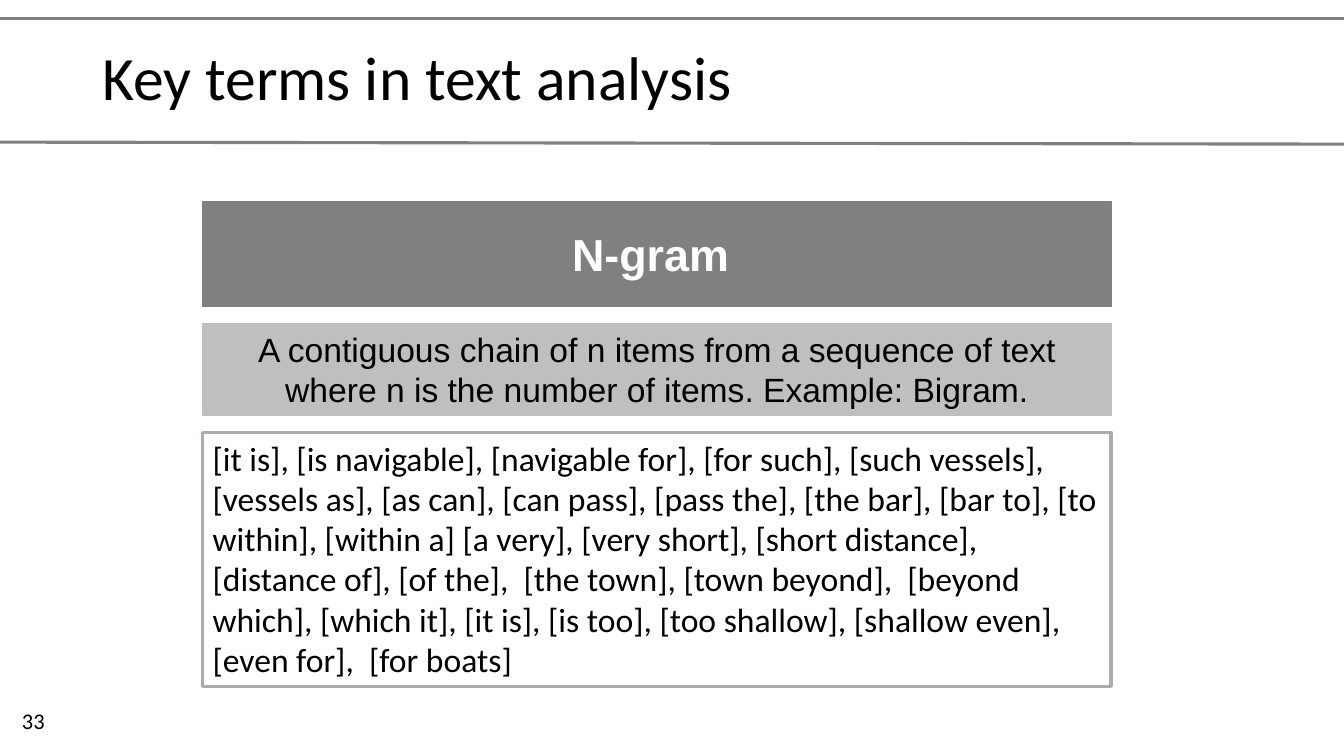
from lxml import etree
from pptx import Presentation
from pptx.dml.color import RGBColor
from pptx.enum import shapes, text
from pptx.oxml.ns import qn
from pptx.util import Inches, Pt


def color(hex_string):
    return RGBColor.from_string(hex_string)


def write(box, words, size, font="Calibri", ink="000000", bold=False,
          align=text.PP_ALIGN.LEFT, anchor=text.MSO_ANCHOR.MIDDLE, spacing=1.0):
    frame = box.text_frame
    frame.word_wrap = True
    frame.vertical_anchor = anchor
    para = frame.paragraphs[0]
    para.alignment = align
    para.line_spacing = spacing
    span = para.add_run()
    span.text = words
    span.font.name = font
    span.font.size = Pt(size)
    span.font.bold = bold
    span.font.color.rgb = color(ink)


deck = Presentation()
deck.slide_width = Inches(13.33)
deck.slide_height = Inches(7.5)
page = deck.slides.add_slide(deck.slide_layouts[6])

# Rules above and below the title
for start_y, end_y in [(0.18, 0.18), (1.41, 1.43)]:
    rule = page.shapes.add_connector(
        shapes.MSO_CONNECTOR.STRAIGHT,
        Inches(0), Inches(start_y), Inches(13.33), Inches(end_y))
    rule.line.color.rgb = color("808080")
    rule.line.width = Pt(2.25)
    etree.SubElement(rule._element.spPr, qn("a:effectLst"))

title = page.shapes.add_textbox(Inches(0.92), Inches(0.18), Inches(11.5), Inches(1.24))
write(title, "Key terms in text analysis", 44, spacing=0.9)

# Term, definition and example, stacked in one column
bigrams = (
    "[it is], [is navigable], [navigable for], [for such], [such vessels], "
    "[vessels as], [as can], [can pass], [pass the], [the bar], [bar to], "
    "[to within], [within a] [a very], [very short], [short distance], "
    "[distance of], [of the],  [the town], [town beyond],  [beyond which], "
    "[which it], [it is], [is too], [too shallow], [shallow even], "
    "[even for],  [for boats]")
definition = ("A contiguous chain of n items from a sequence of text "
              "where n is the number of items. Example: Bigram.")
center = text.PP_ALIGN.CENTER
top = text.MSO_ANCHOR.TOP
panels = [
    (2, 1.04, "808080", "808080", 0.5, "N-gram ",
     dict(size=32, font="Arial", ink="FFFFFF", bold=True, align=center)),
    (3.21, 0.91, "BFBFBF", "BFBFBF", 0.75, definition,
     dict(size=24, font="Arial", align=center, anchor=top)),
    (4.29, 2.52, None, "AFABAB", 2.25, bigrams, dict(size=24, anchor=top)),
]
for y, height, fill, outline, weight, words, style in panels:
    panel = page.shapes.add_shape(
        shapes.MSO_SHAPE.RECTANGLE, Inches(2.01), Inches(y), Inches(9.01), Inches(height))
    panel.shadow.inherit = False
    if fill:
        panel.fill.solid()
        panel.fill.fore_color.rgb = color(fill)
    else:
        panel.fill.background()
    panel.line.color.rgb = color(outline)
    panel.line.width = Pt(weight)
    write(panel, words, **style)

page_number = page.shapes.add_textbox(Inches(0.12), Inches(6.95), Inches(3), Inches(0.4))
write(page_number, "33", 16)

deck.save("out.pptx")
